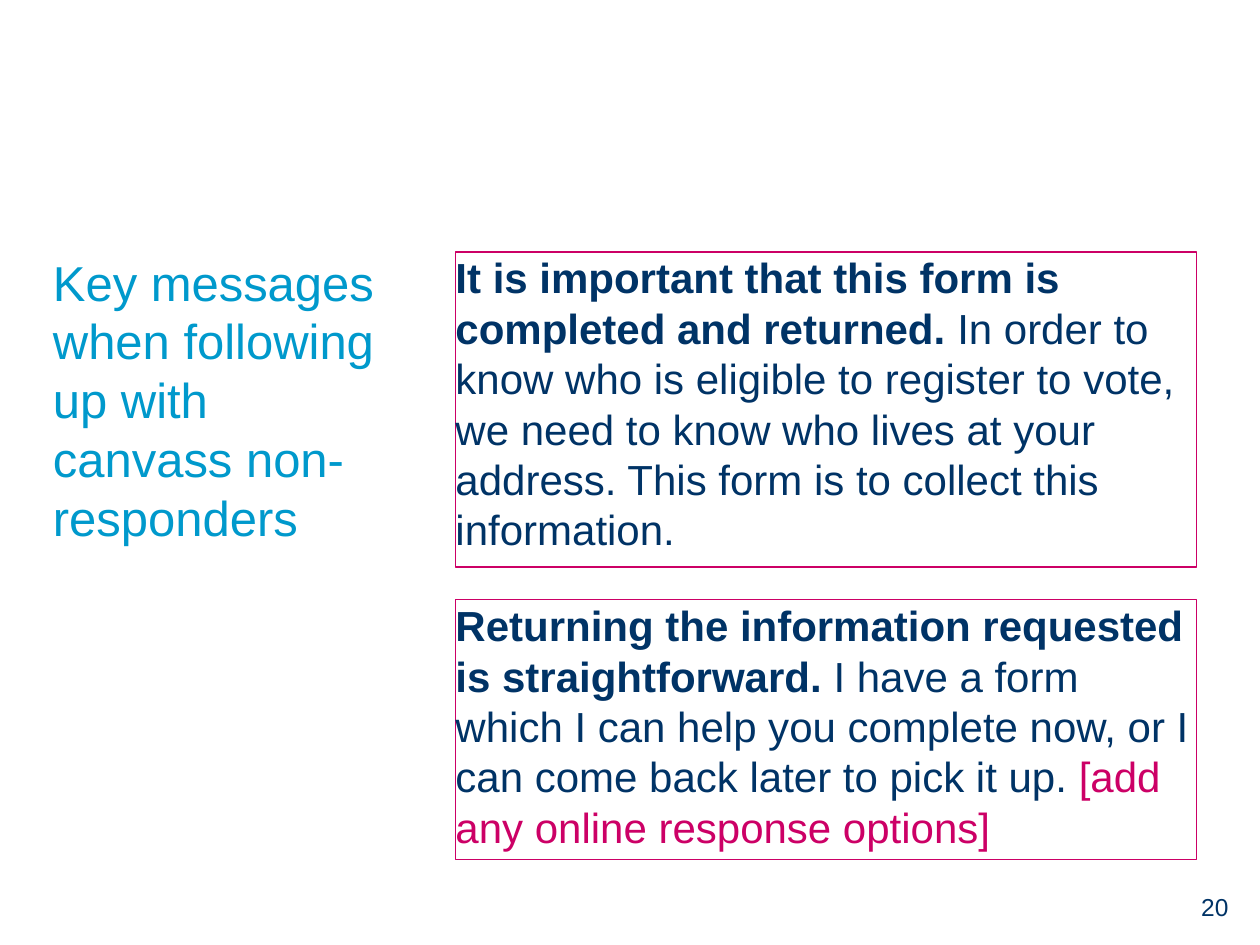
import pptx
import pptx.util
import pptx.dml.color
import pptx.enum.text
import pptx.enum.shapes
from dataclasses import dataclass

Pt = pptx.util.Pt
Inches = pptx.util.Inches
Align = pptx.enum.text.PP_ALIGN


@dataclass(frozen=True)
class Theme:
    font: str = "Arial"
    navy: str = "003366"
    blue: str = "0099CC"
    pink: str = "CC0066"
    head: int = 28
    body: int = 24
    foot: int = 14
    rule: float = 0.75


THEME = Theme()
WIDE, HIGH = 10, 7.5
TOP = 2
LEFT, SIDE = 0.42, 2.75
MAIN, SPAN = 3.615, 5.88

NOTES = [
    (TOP, 2.5, [
        ("It is important that this form is completed and returned. ", True, THEME.navy),
        ("In order to know who is eligible to register to vote, we need to know "
         "who lives at your address. This form is to collect this information.",
         False, THEME.navy),
    ]),
    (4.76, 2.06, [
        ("Returning the information requested is straightforward. ", True, THEME.navy),
        ("I have a form which I can help you complete now, or I can come back "
         "later to pick it up. ", False, THEME.navy),
        ("[add any online response options]", False, THEME.pink),
    ]),
]


def paint(text):
    return pptx.dml.color.RGBColor.from_string(text)


def write(shape, runs, size, align=Align.LEFT):
    frame = shape.text_frame
    frame.margin_left = frame.margin_right = 0
    frame.margin_top = frame.margin_bottom = 0
    frame.word_wrap = True
    frame.auto_size = pptx.enum.text.MSO_AUTO_SIZE.NONE
    frame.vertical_anchor = pptx.enum.text.MSO_ANCHOR.TOP
    para = frame.paragraphs[0]
    para.alignment = align
    para.line_spacing = 1.0
    para.space_before = Pt(0)
    para.font.name = THEME.font
    para.font.size = Pt(size)
    for words, bold, tone in runs:
        run = para.add_run()
        run.text = words
        run.font.bold = bold
        run.font.color.rgb = paint(tone)


def add_title(slide, box):
    title = slide.shapes.title
    title.left, title.top, title.width, title.height = map(Inches, box)
    words = "Key messages when following up with canvass non-responders"
    write(title, [(words, False, THEME.blue)], THEME.head)


def add_note(slide, box, runs):
    kind = pptx.enum.shapes.MSO_SHAPE.RECTANGLE
    note = slide.shapes.add_shape(kind, *map(Inches, box))
    note.shadow.inherit = False
    note.fill.background()
    note.line.color.rgb = paint(THEME.pink)
    note.line.width = Pt(THEME.rule)
    write(note, runs, THEME.body)


def add_foot(slide, box):
    foot = slide.shapes.add_textbox(*map(Inches, box))
    write(foot, [("20", False, THEME.navy)], THEME.foot, Align.RIGHT)


def main():
    deck = pptx.Presentation()
    deck.slide_width, deck.slide_height = Inches(WIDE), Inches(HIGH)
    slide = deck.slides.add_slide(deck.slide_layouts.get_by_name("Title Only"))
    add_title(slide, (LEFT, TOP, SIDE, 4.67))
    add_foot(slide, (7.67, 7.08, 2.08, 0.25))
    for top, tall, runs in reversed(NOTES):
        add_note(slide, (MAIN, top, SPAN, tall), runs)
    deck.save("out.pptx")


if __name__ == "__main__":
    main()
